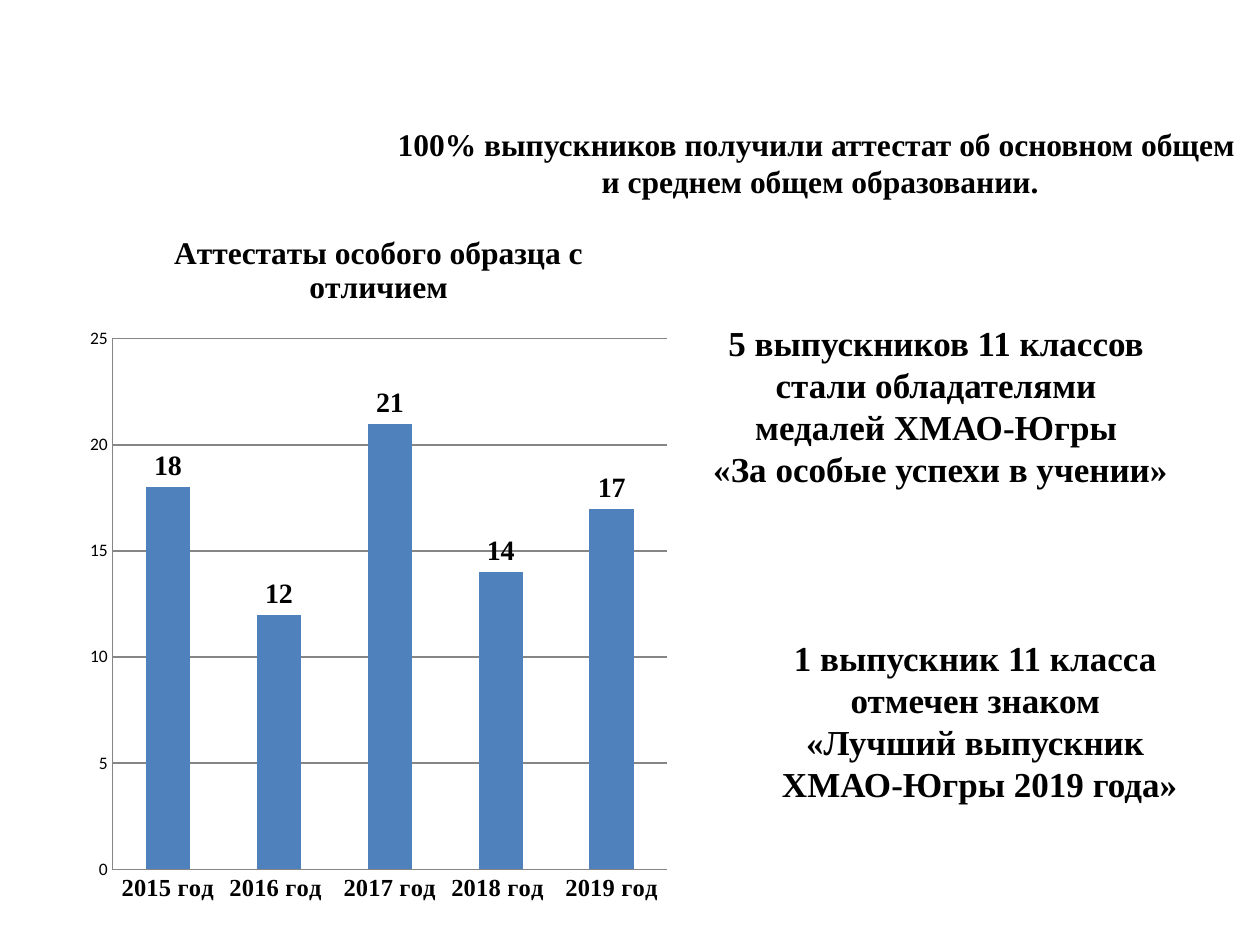
import pptx
import pptx.util
import pptx.chart.data
import pptx.dml.color
import pptx.enum.chart
import pptx.enum.text

SERIF = "Times New Roman"
YEARS = ["2015 год", "2016 год ", "2017 год", "2018 год ", "2019 год"]
COUNTS = [18, 12, 21, 14, 17]
CHART_TITLE = "Аттестаты особого образца с отличием"
CHART_BOX = (0.62, 1.64, 4.77, 5.63)
TEXTS = [
    ((5.55, 2.5, 3.83, 1.45), 20, [
        "5 выпускников 11 классов ", "стали обладателями ",
        "медалей ХМАО-Югры ", "«За особые успехи в учении»"]),
    ((6.09, 5, 3.37, 1.45), 20, [
        "1 выпускник 11 класса ", "отмечен знаком ",
        "«Лучший выпускник ", "ХМАО-Югры 2019 года»"]),
    ((3.02, 0.94, 6.98, 1.01), 18, [
        "100% выпускников получили аттестат об основном общем ",
        "и среднем общем образовании."]),
]


def rgb(value):
    """Turn a hex string into a colour."""
    return pptx.dml.color.RGBColor.from_string(value)


def inches(box):
    """Convert a box in inches to lengths."""
    return [pptx.util.Inches(v) for v in box]


def style(font, size, bold=True, name=SERIF):
    """Set the face, size, weight and black colour of a font."""
    font.name = name
    font.size = pptx.util.Pt(size)
    font.bold = bold
    font.color.rgb = rgb("000000")


def add_text(s, box, size, lines):
    """Add a centred bold text box, one paragraph per line."""
    tf = s.shapes.add_textbox(*inches(box)).text_frame
    tf.word_wrap = False
    tf.auto_size = pptx.enum.text.MSO_AUTO_SIZE.SHAPE_TO_FIT_TEXT
    tf.text = "\n".join(lines)
    for p in tf.paragraphs:
        p.alignment = pptx.enum.text.PP_ALIGN.CENTER
        style(p.runs[0].font, size)


def add_certificates_chart(s):
    """Add the column chart of certificates by year."""
    data = pptx.chart.data.CategoryChartData()
    data.categories = YEARS
    data.add_series("Series 1", COUNTS)
    kind = pptx.enum.chart.XL_CHART_TYPE.COLUMN_CLUSTERED
    chart = s.shapes.add_chart(kind, *inches(CHART_BOX), data).chart
    style(chart.font, 10, False, "Calibri")
    chart.has_legend = False
    chart.has_title = True
    tf = chart.chart_title.text_frame
    tf.text = CHART_TITLE
    style(tf.paragraphs[0].runs[0].font, 18)
    chart.chart_title.include_in_layout = False

    plot = chart.plots[0]
    plot.gap_width = 150
    plot.vary_by_categories = False
    fill = plot.series[0].format.fill
    fill.solid()
    fill.fore_color.rgb = rgb("4F81BD")
    labels = plot.series[0].data_labels
    labels.show_value = True
    labels.position = pptx.enum.chart.XL_LABEL_POSITION.OUTSIDE_END
    style(labels.font, 16)

    grid = chart.value_axis.major_gridlines
    for part in (chart.category_axis, chart.value_axis, grid):
        part.format.line.color.rgb = rgb("868686")
        part.format.line.width = pptx.util.Pt(0.75)
    for axis in (chart.category_axis, chart.value_axis):
        axis.major_tick_mark = pptx.enum.chart.XL_TICK_MARK.NONE
    style(chart.category_axis.tick_labels.font, 14)


def main():
    """Build the slide and save it."""
    prs = pptx.Presentation()
    prs.slide_width, prs.slide_height = inches((10, 7.5))
    s = prs.slides.add_slide(prs.slide_layouts[6])
    add_certificates_chart(s)
    for box, size, lines in TEXTS:
        add_text(s, box, size, lines)
    prs.save("out.pptx")


if __name__ == "__main__":
    main()
